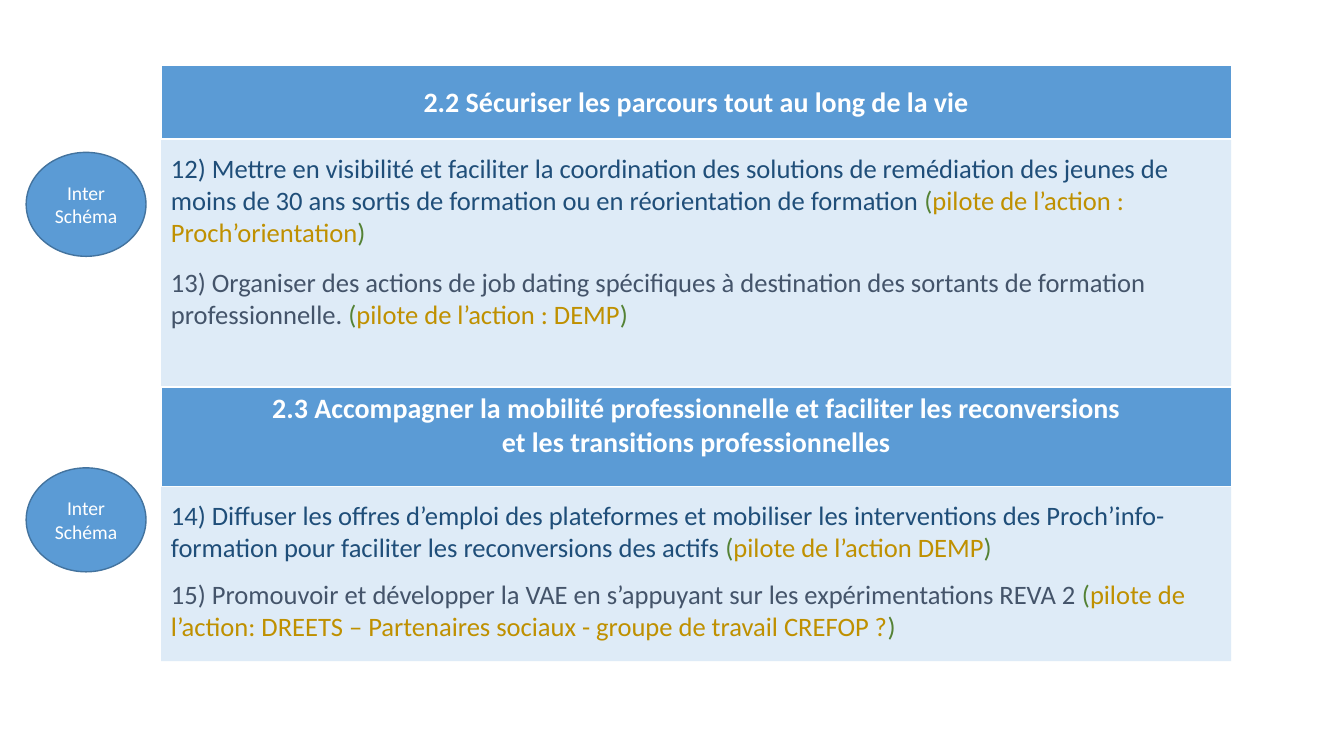
from dataclasses import dataclass

from lxml import etree
from pptx import Presentation
from pptx.dml.color import RGBColor
from pptx.enum.shapes import MSO_SHAPE
from pptx.enum.text import MSO_ANCHOR, PP_ALIGN
from pptx.oxml.ns import qn
from pptx.util import Cm, Pt

RECTANGLE, OVAL = MSO_SHAPE.RECTANGLE, MSO_SHAPE.OVAL
TOP, MIDDLE = MSO_ANCHOR.TOP, MSO_ANCHOR.MIDDLE
LEFT, CENTER = PP_ALIGN.LEFT, PP_ALIGN.CENTER


@dataclass(frozen=True)
class Theme:
    font: str = "Calibri"
    white: str = "FFFFFF"
    blue: str = "5B9BD5"
    outline: str = "43739E"
    pale: str = "DEEBF7"
    navy: str = "1F4E79"
    slate: str = "44546A"
    green: str = "548235"
    gold: str = "BF9000"
    heading_size: float = 20
    body_size: float = 19
    badge_size: float = 14


THEME = Theme()


def write_paragraphs(frame, paragraphs, size, align, gap=0, bold=False):
    """Each paragraph is a list of (text, colour) runs."""
    for index, runs in enumerate(paragraphs):
        paragraph = frame.add_paragraph() if index else frame.paragraphs[0]
        paragraph.alignment = align
        paragraph.space_before = Pt(gap if index else 0)
        for text, color in runs:
            run = paragraph.add_run()
            run.text = text
            run.font.color.rgb = RGBColor.from_string(color)
            font_format = {"name": THEME.font, "size": Pt(size), "bold": bold}
            for name, value in font_format.items():
                setattr(run.font, name, value)


def add_filled_shape(kind, left, top, width, height, color):
    shape = slide.shapes.add_shape(kind, Cm(left), Cm(top), Cm(width), Cm(height))
    shape.shadow.inherit = False
    shape.fill.solid()
    shape.fill.fore_color.rgb = RGBColor.from_string(color)
    return shape


presentation = Presentation()
presentation.slide_width, presentation.slide_height = Cm(33.87), Cm(19.05)
slide = presentation.slides.add_slide(presentation.slide_layouts[6])

# Content: each section has a heading and its actions (text, colour, lead)
SECTIONS = [
    {
        "heading": ["2.2 Sécuriser les parcours tout au long de la vie"],
        "heading_top": 1.65, "heading_height": 1.88, "anchor": MIDDLE,
        "panel_top": 3.53, "panel_height": 6.55, "gap": 12.8,
        "actions": [
            ("12) Mettre en visibilité et faciliter la coordination des solutions de "
             "remédiation des jeunes de moins de 30 ans sortis de formation ou en "
             "réorientation de formation ",
             THEME.navy, "pilote de l’action : Proch’orientation"),
            ("13) Organiser des actions de job dating spécifiques à destination des "
             "sortants de formation professionnelle. ",
             THEME.slate, "pilote de l’action : DEMP"),
        ],
    },
    {
        "heading": [
            "2.3 Accompagner la mobilité professionnelle et faciliter les reconversions",
            "et les transitions professionnelles",
        ],
        "heading_top": 9.75, "heading_height": 2.54, "anchor": TOP,
        "panel_top": 12.27, "panel_height": 4.39, "gap": 11,
        "actions": [
            ("14) Diffuser les offres d’emploi des plateformes et mobiliser les "
             "interventions des Proch’info-formation pour faciliter les reconversions "
             "des actifs ",
             THEME.navy, "pilote de l’action DEMP"),
            ("15) Promouvoir et développer la VAE en s’appuyant sur les "
             "expérimentations REVA 2 ",
             THEME.slate,
             "pilote de l’action: DREETS – Partenaires sociaux - groupe de travail "
             "CREFOP ?"),
        ],
    },
]
COLUMN_LEFT, COLUMN_WIDTH = 4.06, 26.97
BORDER_WIDTHS = {"a:lnL": 1, "a:lnR": 1, "a:lnT": 1, "a:lnB": 3}

for section in SECTIONS:
    # Heading table
    table = slide.shapes.add_table(
        1, 1, Cm(COLUMN_LEFT), Cm(section["heading_top"]),
        Cm(COLUMN_WIDTH), Cm(section["heading_height"])).table
    cell = table.cell(0, 0)
    cell.vertical_anchor = section["anchor"]
    cell_properties = cell._tc.get_or_add_tcPr()
    for tag, width in BORDER_WIDTHS.items():
        border = etree.SubElement(cell_properties, qn(tag), w=str(Pt(width)))
        border_fill = etree.SubElement(border, qn("a:solidFill"))
        etree.SubElement(border_fill, qn("a:srgbClr"), val=THEME.white)
    cell.fill.solid()
    cell.fill.fore_color.rgb = RGBColor.from_string(THEME.blue)
    heading = [[(line, THEME.white)] for line in section["heading"]]
    write_paragraphs(cell.text_frame, heading, THEME.heading_size, CENTER, bold=True)

    # Panel of actions
    panel = add_filled_shape(RECTANGLE, COLUMN_LEFT, section["panel_top"],
                             COLUMN_WIDTH, section["panel_height"], THEME.pale)
    panel.line.fill.background()
    frame = panel.text_frame
    frame.word_wrap = True
    frame.vertical_anchor = TOP
    frame.margin_top = Cm(0.3)
    actions = [
        [(text, color), ("(", THEME.green), (lead, THEME.gold), (")", THEME.green)]
        for text, color, lead in section["actions"]
    ]
    write_paragraphs(frame, actions, THEME.body_size, LEFT, section["gap"])

# Round badges beside the panels
for badge_top in (3.84, 11.79):
    badge = add_filled_shape(OVAL, 0.66, badge_top, 3.02, 2.62, THEME.blue)
    badge.line.color.rgb = RGBColor.from_string(THEME.outline)
    badge.line.width = Pt(1)
    badge.text_frame.word_wrap = False
    badge.text_frame.vertical_anchor = MIDDLE
    badge_lines = [[(word, THEME.white)] for word in ("Inter", "Schéma")]
    write_paragraphs(badge.text_frame, badge_lines, THEME.badge_size, CENTER)

presentation.save("out.pptx")
